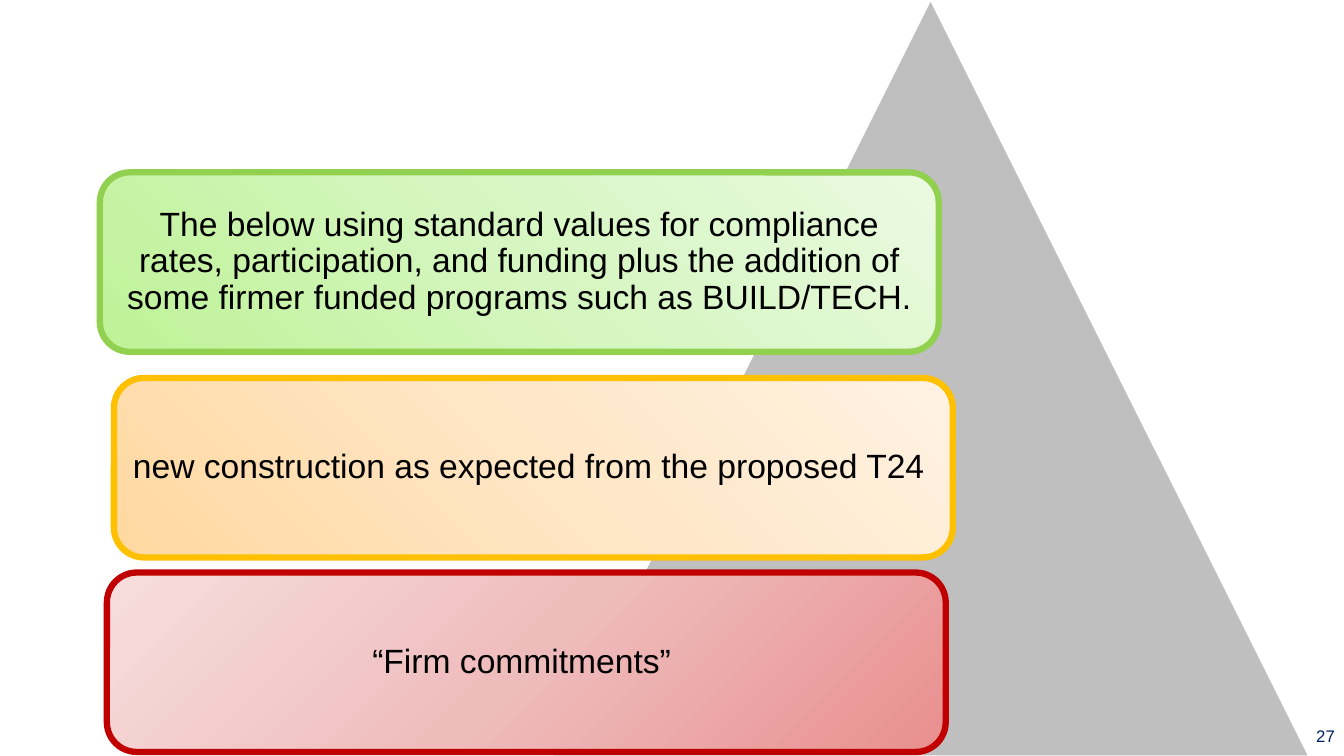
from pptx import Presentation
from pptx import util as u
from pptx.dml.color import RGBColor
from pptx.enum import shapes, text
from pptx.oxml import parse_xml
from pptx.oxml.ns import nsdecls, qn

BLACK = RGBColor(0x00, 0x00, 0x00)
WHITE = RGBColor(0xFF, 0xFF, 0xFF)
GREY = RGBColor(0xBF, 0xBF, 0xBF)
NAVY = RGBColor(0x00, 0x20, 0x60)
RED = RGBColor(0xC0, 0x00, 0x00)
AMBER = RGBColor(0xFF, 0xC0, 0x00)
GREEN = RGBColor(0x92, 0xD0, 0x50)
RED_SHADES = [RGBColor(0xE9, 0x8F, 0x8F), RGBColor(0xEF, 0xBC, 0xBC), RGBColor(0xF7, 0xDE, 0xDE)]
AMBER_SHADES = [RGBColor(0xFF, 0xD8, 0xA0), RGBColor(0xFF, 0xE6, 0xC5), RGBColor(0xFF, 0xF2, 0xE3)]
GREEN_SHADES = [RGBColor(0xBE, 0xF2, 0x97), RGBColor(0xD5, 0xF6, 0xC0), RGBColor(0xEA, 0xFA, 0xE0)]

LEVEL_WIDTH, LEVEL_HEIGHT = 8.32, 1.78
# left, top, outline, gradient shades, corner the gradient starts from, wording
LEVELS = [
    (1.06, 5.68, RED, RED_SHADES, "right", "“Firm commitments” "),
    (1.13, 3.75, AMBER, AMBER_SHADES, "left",
     "new construction as expected from the proposed T24 "),
    (0.99, 1.71, GREEN, GREEN_SHADES, "left",
     "The below using standard values for compliance rates, participation, and funding "
     "plus the addition of some firmer funded programs such as BUILD/TECH."),
]


def style_text(frame, wording, size, color, align):
    frame.word_wrap = True
    frame.auto_size = text.MSO_AUTO_SIZE.NONE
    frame.vertical_anchor = text.MSO_ANCHOR.MIDDLE
    frame.text = wording
    para = frame.paragraphs[0]
    para.alignment = align
    span = para.runs[0]
    span.font.name = "Arial"
    span.font.size = u.Pt(size)
    span.font.color.rgb = color
    return para


def fill_from_bottom_corner(shape, shades, side):
    """Radial gradient that spreads from the bottom left or bottom right corner."""
    stops = "".join(f'<a:gs pos="{i * 50000}"><a:srgbClr val="{shade}"/></a:gs>'
                    for i, shade in enumerate(shades))
    left, right = (100000, 0) if side == "right" else (0, 100000)
    gradient = parse_xml(
        f'<a:gradFill {nsdecls("a")} rotWithShape="1"><a:gsLst>{stops}</a:gsLst>'
        f'<a:path path="circle"><a:fillToRect l="{left}" t="100000" r="{right}" b="0"/>'
        '</a:path></a:gradFill>')
    shape.fill.background()
    properties = shape._element.spPr
    properties.replace(properties.find(qn("a:noFill")), gradient)


def add_page_number(page, left, top, width, height):
    box = page.shapes.title
    box.left, box.top = u.Inches(left), u.Inches(top)
    box.width, box.height = u.Inches(width), u.Inches(height)
    style_text(box.text_frame, "27", 12, NAVY, text.PP_ALIGN.RIGHT)


def add_pyramid(page, left, top, width, height):
    pyramid = page.shapes.add_shape(
        shapes.MSO_SHAPE.ISOSCELES_TRIANGLE, u.Inches(left), u.Inches(top),
        u.Inches(width), u.Inches(height))
    pyramid.shadow.inherit = False
    pyramid.fill.solid()
    pyramid.fill.fore_color.rgb = GREY
    pyramid.line.color.rgb = WHITE
    pyramid.line.width = u.Pt(1)


def add_level(page, left, top, outline, shades, side, wording):
    level = page.shapes.add_shape(
        shapes.MSO_SHAPE.ROUNDED_RECTANGLE, u.Inches(left), u.Inches(top),
        u.Inches(LEVEL_WIDTH), u.Inches(LEVEL_HEIGHT))
    level.shadow.inherit = False
    fill_from_bottom_corner(level, shades, side)
    level.line.color.rgb = outline
    level.line.width = u.Pt(4.5)
    frame = level.text_frame
    frame.margin_left = frame.margin_right = u.Inches(0.1)
    frame.margin_top = frame.margin_bottom = u.Inches(0.1)
    para = style_text(frame, wording, 24, BLACK, text.PP_ALIGN.CENTER)
    para.line_spacing = 0.9


def main():
    deck = Presentation()
    deck.slide_width, deck.slide_height = u.Inches(13.33), u.Inches(7.5)
    page = deck.slides.add_slide(deck.slide_layouts[5])
    add_page_number(page, 11.41, 7.1, 1.93, 0.4)
    add_pyramid(page, 5.48, 0, 7.5, 7.5)
    # Levels from the base upwards
    for level in LEVELS:
        add_level(page, *level)
    deck.save("out.pptx")


if __name__ == "__main__":
    main()
